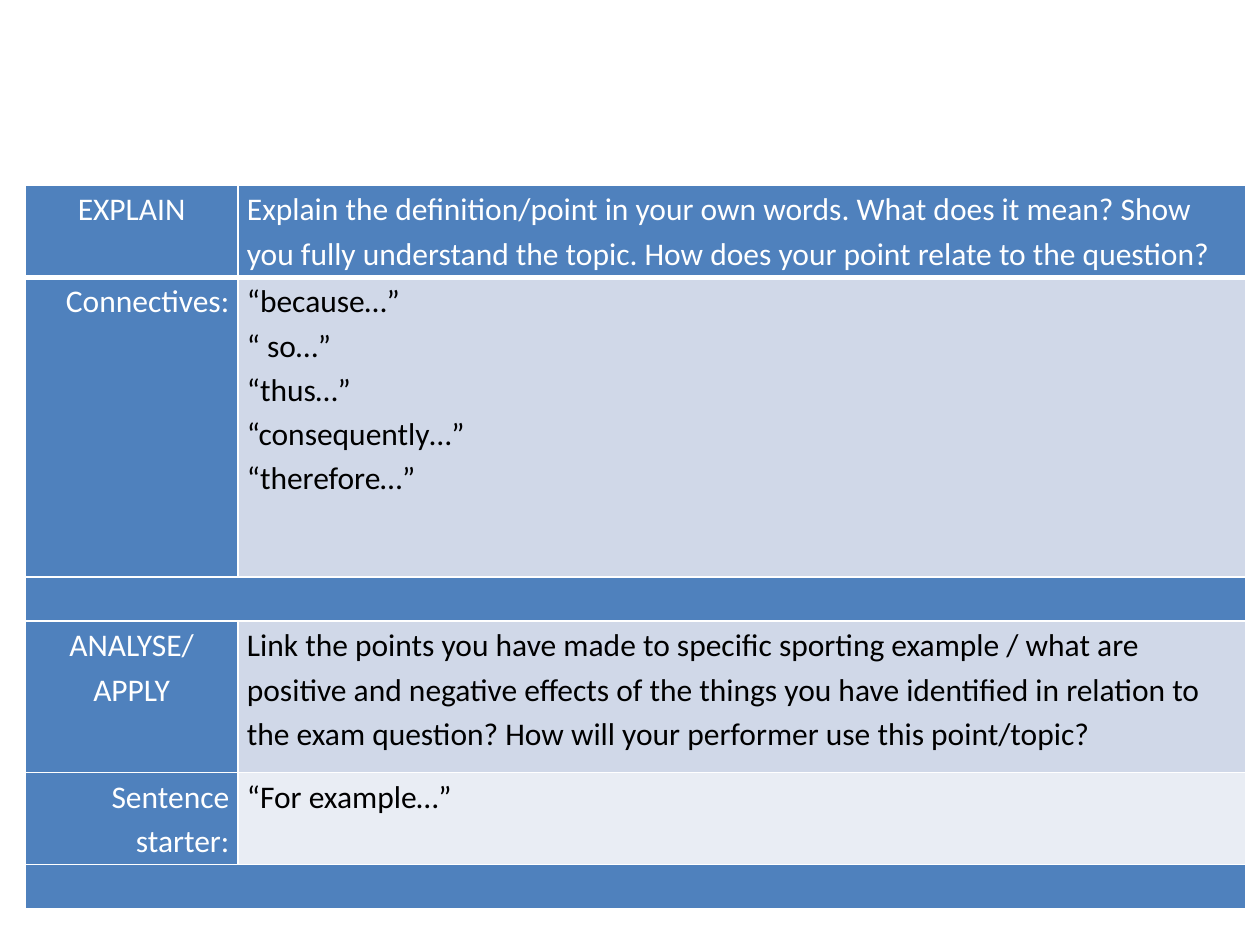
from lxml import etree
from pptx import Presentation
from pptx.dml.color import RGBColor
from pptx.enum.text import PP_ALIGN
from pptx.oxml.ns import qn
from pptx.util import Inches, Pt

LEFT, CENTER, RIGHT = PP_ALIGN.LEFT, PP_ALIGN.CENTER, PP_ALIGN.RIGHT

COLORS = {"blue": "4F81BD", "band": "D0D8E8", "pale": "E9EDF4",
          "white": "FFFFFF", "black": "000000"}

COL_WIDTHS = [1.69, 8]
DIVIDER = None
# height, label, label alignment, body, body fill
ROWS = [
    (0.73, "EXPLAIN", CENTER,
     "Explain the definition/point in your own words. What does it mean? "
     "Show you fully understand the topic. How does your point relate to "
     "the question?", "blue"),
    (2.38, "Connectives:", RIGHT,
     "“because…”\n“ so…”\n“thus…”\n“consequently…”\n“therefore…”", "band"),
    (0.35, DIVIDER, LEFT, "", "blue"),
    (1.2, "ANALYSE/\nAPPLY", CENTER,
     "Link the points you have made to specific sporting example / what are "
     "positive and negative effects of the things you have identified in "
     "relation to the exam question? How will your performer use this "
     "point/topic?", "band"),
    (0.73, "Sentence starter:", RIGHT, "“For example…”", "pale"),
    (0.35, DIVIDER, LEFT, "", "blue"),
]


def set_borders(cell, widths):
    """Draw white borders; widths maps L, R, T and B to points."""
    tcPr = cell._tc.get_or_add_tcPr()
    for side, width in widths.items():
        ln = etree.SubElement(tcPr, qn(f"a:ln{side}"), w=str(Pt(width)))
        fill = etree.SubElement(ln, qn("a:solidFill"))
        etree.SubElement(fill, qn("a:srgbClr"), val=COLORS["white"])


def fill_cell(cell, text, fill, align, borders):
    set_borders(cell, borders)
    cell.fill.solid()
    cell.fill.fore_color.rgb = RGBColor.from_string(COLORS[fill])
    cell.margin_left = cell.margin_right = Inches(0.07)
    cell.margin_top = cell.margin_bottom = 0
    if not text:
        return
    color = COLORS["white" if fill == "blue" else "black"]
    tf = cell.text_frame
    tf.text = text
    for p in tf.paragraphs:
        p.alignment = align
        p.line_spacing = 1.15
        for r in p.runs:
            r.font.name = "Calibri"
            r.font.size = Pt(18)
            r.font.bold = False
            r.font.color.rgb = RGBColor.from_string(color)


def add_guide_table(s, left, top):
    width, height = sum(COL_WIDTHS), sum(row[0] for row in ROWS)
    table = s.shapes.add_table(len(ROWS), len(COL_WIDTHS), Inches(left),
                               Inches(top), Inches(width), Inches(height)).table
    for column, col_width in zip(table.columns, COL_WIDTHS):
        column.width = Inches(col_width)
    for i, (row_height, label, align, body, fill) in enumerate(ROWS):
        table.rows[i].height = Inches(row_height)
        borders = {"L": 1, "R": 1, "T": 3 if i == 1 else 1,
                   "B": 3 if i == 0 else 1}
        fill_cell(table.cell(i, 0), label, "blue", align, borders)
        fill_cell(table.cell(i, 1), body, fill, LEFT, borders)
        if label is DIVIDER:
            table.cell(i, 0).merge(table.cell(i, 1))


def main():
    prs = Presentation()
    prs.slide_width, prs.slide_height = Inches(10), Inches(7.5)
    s = prs.slides.add_slide(prs.slide_layouts[6])
    add_guide_table(s, 0.2, 1.47)
    prs.save("out.pptx")


if __name__ == "__main__":
    main()
